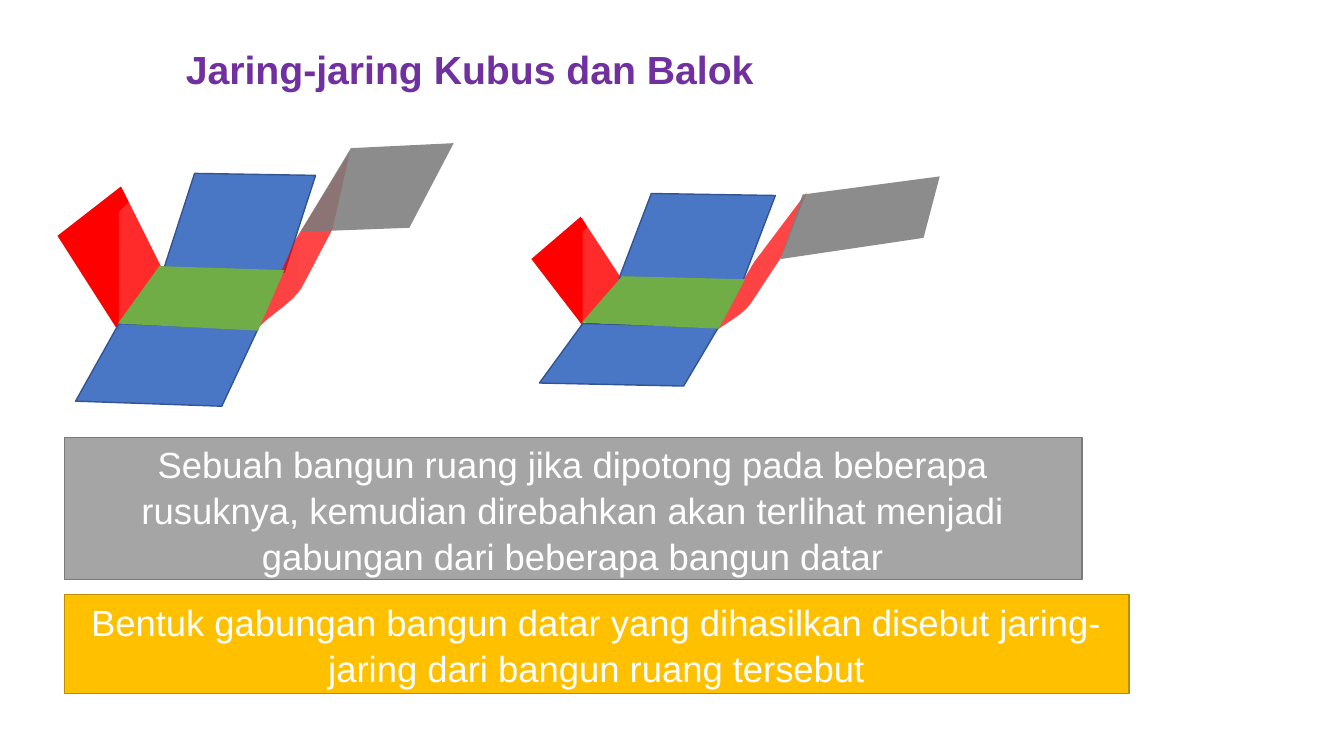
from dataclasses import dataclass

from pptx import Presentation
from pptx.dml.color import RGBColor
from pptx.enum.shapes import MSO_SHAPE
from pptx.enum.text import MSO_ANCHOR, MSO_AUTO_SIZE, PP_ALIGN
from pptx.oxml.ns import qn
from pptx.util import Inches, Pt
from lxml.etree import SubElement


@dataclass(frozen=True)
class Theme:
    font: str = "Arial"
    title_size: int = 28
    body_size: int = 26
    title: str = "7030A0"
    white: str = "FFFFFF"
    gray: str = "A5A5A5"
    gray_line: str = "7A7A7A"
    gold: str = "FFC000"
    gold_line: str = "BD8E00"
    red: str = "FF0000"
    blue: str = "4472C4"
    blue_line: str = "325491"
    lid: str = "7C7C7C"
    base: str = "70AD47"


THEME = Theme()
# Fill colour, opacity in percent and line colour of each face
FACES = {
    "left": (THEME.red, 100, None),
    "back": (THEME.blue, 97, THEME.blue_line),
    "right": (THEME.red, 73, None),
    "front": (THEME.blue, 97, THEME.blue_line),
    "lid": (THEME.lid, 87, None),
    "base": (THEME.base, 100, None),
}
# A pair is a corner; six numbers are a cubic curve to the last pair.
KUBUS = {
    "left": [(1.17, 3.28), (0.57, 2.34), (1.2, 1.85), (1.62, 2.69)],
    "body": (1.18, 1.71, 1.78, 1.57),
    "back": [(1.62, 2.68), (1.93, 1.72), (3.13, 1.74), (2.82, 2.7)],
    "right": [(2.51, 3.32), (2.64, 3.13, 2.86, 3.05, 2.99, 2.86),
              (3.3, 2.27), (3.47, 1.51), (2.93, 2.38)],
    "front": [(1.18, 3.21), (0.75, 3.98), (2.2, 4.03), (2.56, 3.26)],
    "lid": [(2.98, 2.3), (3.48, 1.47), (4.5, 1.42), (4.06, 2.26)],
    "base": [(1.17, 3.21), (1.58, 2.64), (2.82, 2.68), (2.56, 3.28)],
}
BALOK = {
    "left": [(5.77, 3.22), (5.27, 2.57), (5.76, 2.15),
             (5.76, 2.17, 5.78, 2.16, 5.78, 2.18), (6.16, 2.76)],
    "body": (5.78, 2, 1.76, 1.2),
    "back": [(6.14, 2.76), (6.46, 1.92), (7.69, 1.94), (7.37, 2.78)],
    "right": [(7.03, 3.36), (7.15, 3.21, 7.32, 3.17, 7.44, 3.02),
              (7.75, 2.55), (8, 1.91), (7.48, 2.6)],
    "front": [(5.78, 3.21), (5.35, 3.8), (6.78, 3.83), (7.13, 3.24)],
    "lid": [(7.74, 2.57), (7.96, 1.93), (9.32, 1.75), (9.16, 2.36)],
    "base": [(5.77, 3.2), (6.17, 2.74), (7.39, 2.77), (7.13, 3.26)],
}


def paint(sp, fill, opacity=100, line=None):
    sp.shadow.inherit = False
    sp.fill.solid()
    sp.fill.fore_color.rgb = RGBColor.from_string(fill)
    if opacity < 100:
        color = sp.fill._xPr.find(qn("a:solidFill"))[0]
        SubElement(color, qn("a:alpha")).set("val", str(opacity * 1000))
    if line:
        sp.line.color.rgb = RGBColor.from_string(line)
        sp.line.width = Pt(1)
    else:
        sp.line.fill.background()


def write(sp, text, *, size, color, bold=False, spacing=1.0):
    tf = sp.text_frame
    tf.word_wrap = True
    tf.auto_size = MSO_AUTO_SIZE.NONE
    tf.vertical_anchor = MSO_ANCHOR.MIDDLE
    p = tf.paragraphs[0]
    p.alignment = PP_ALIGN.CENTER
    p.line_spacing = spacing
    r = p.add_run()
    r.text = text
    r.font.name = THEME.font
    r.font.size = Pt(size)
    r.font.bold = bold
    r.font.color.rgb = RGBColor.from_string(color)


def add_title(slide, text, left, top, width, height):
    sp = slide.shapes.title
    sp.left, sp.top = Inches(left), Inches(top)
    sp.width, sp.height = Inches(width), Inches(height)
    write(sp, text, size=THEME.title_size, color=THEME.title, bold=True)


def add_banner(slide, text, box, fill, line):
    sp = slide.shapes.add_shape(MSO_SHAPE.RECTANGLE, *map(Inches, box))
    paint(sp, fill, line=line)
    write(sp, text, size=THEME.body_size, color=THEME.white, spacing=1.05)


def flatten(outline, steps=12):
    """Turn the curves of an outline into short straight segments."""
    points = []
    for part in outline:
        if len(part) == 2:
            points.append(part)
            continue
        x0, y0 = points[-1]
        x1, y1, x2, y2, x3, y3 = part
        for i in range(1, steps + 1):
            t = i / steps
            a, b, c, d = (1 - t)**3, 3 * t * (1 - t)**2, 3 * t**2 * (1 - t), t**3
            points.append((a * x0 + b * x1 + c * x2 + d * x3,
                           a * y0 + b * y1 + c * y2 + d * y3))
    return points


def add_face(shapes, outline, fill, opacity, line):
    start, *rest = [(Inches(x), Inches(y)) for x, y in flatten(outline)]
    builder = shapes.build_freeform(*start)
    builder.add_line_segments(rest, close=True)
    paint(builder.convert_to_shape(), fill, opacity, line)


def add_net(slide, net):
    """Draw an opened solid, from its back parts to its front ones."""
    shapes = slide.shapes.add_group_shape().shapes
    for name, geometry in net.items():
        if name == "body":
            cube = shapes.add_shape(MSO_SHAPE.CUBE, *map(Inches, geometry))
            paint(cube, THEME.white, 17)
        else:
            add_face(shapes, geometry, *FACES[name])


def main():
    prs = Presentation()
    prs.slide_width, prs.slide_height = Inches(13.33), Inches(7.5)
    slide = prs.slides.add_slide(prs.slide_layouts[5])
    add_title(slide, " Jaring-jaring Kubus dan Balok", 1.36, 0.4, 6.49, 0.57)
    add_banner(slide, "Sebuah bangun ruang jika dipotong pada beberapa rusuknya, "
               "kemudian direbahkan akan terlihat menjadi gabungan dari "
               "beberapa bangun datar",
               (0.64, 4.34, 10.09, 1.41), THEME.gray, THEME.gray_line)
    add_banner(slide, "Bentuk gabungan bangun datar yang dihasilkan disebut "
               "jaring-jaring dari bangun ruang tersebut",
               (0.64, 5.9, 10.56, 0.98), THEME.gold, THEME.gold_line)
    for net in (KUBUS, BALOK):
        add_net(slide, net)
    prs.save("out.pptx")


if __name__ == "__main__":
    main()
